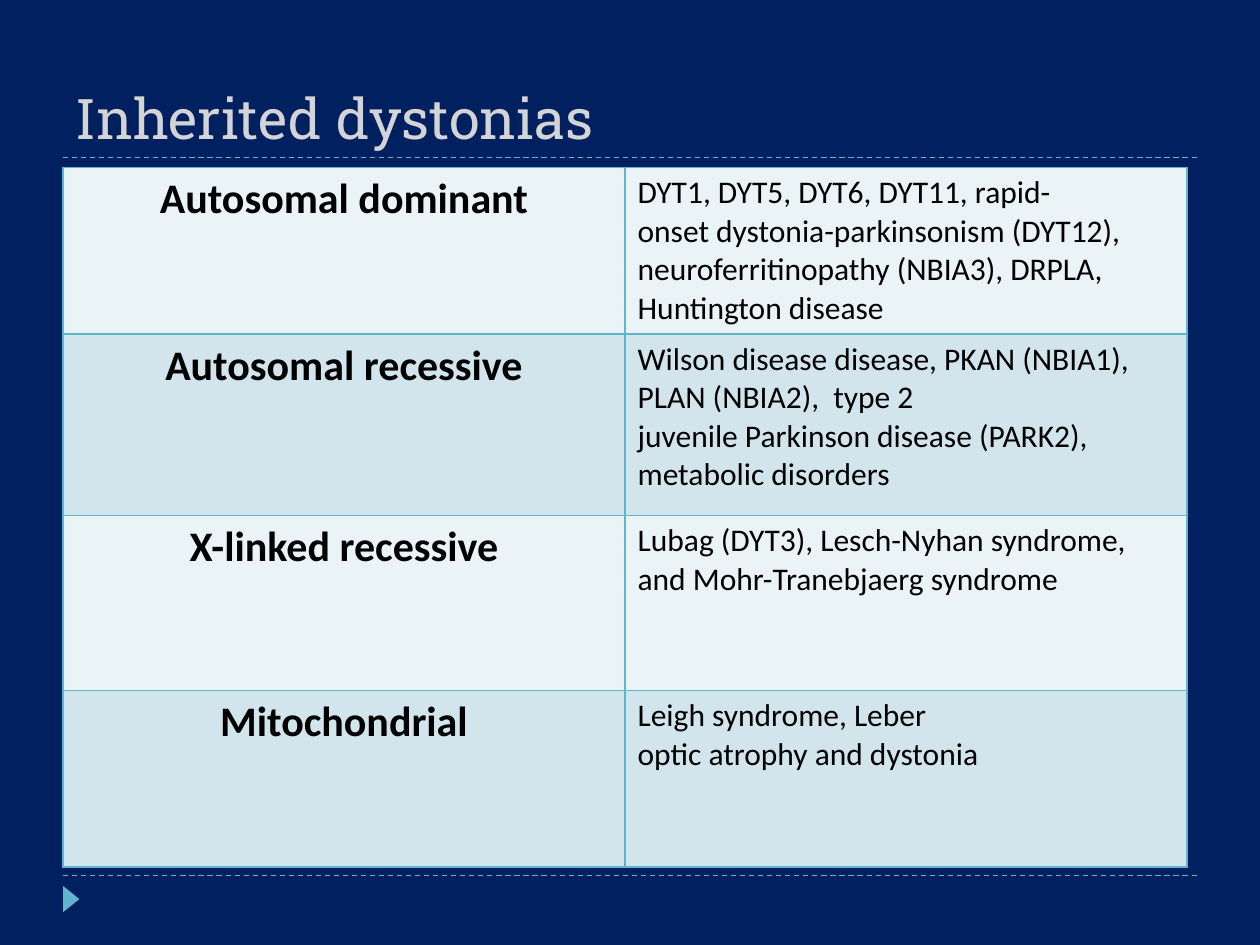
import pptx
import pptx.dml.color
import pptx.enum.dml
import pptx.enum.shapes
import pptx.enum.text
import pptx.oxml
import pptx.oxml.ns
import pptx.util
from lxml import etree

Cm = pptx.util.Cm
Pt = pptx.util.Pt
Align = pptx.enum.text.PP_ALIGN
Anchor = pptx.enum.text.MSO_ANCHOR

COLOURS = {
    "background": "002060",
    "accent": "60B5CC",
    "title": "D4D4D6",
    "text": "000000",
    "light row": "EAF3F6",
    "dark row": "D2E5EC",
}

# Row height in cm, inheritance type, paragraphs of examples
ROWS = [
    (3.35, "Autosomal dominant", [
        "DYT1, DYT5, DYT6, DYT11, rapid-",
        "onset dystonia-parkinsonism (DYT12), neuroferritinopathy (NBIA3), "
        "DRPLA, Huntington disease"]),
    (3.66, "Autosomal recessive", [
        "Wilson disease disease, PKAN (NBIA1), PLAN (NBIA2),  type 2",
        "juvenile Parkinson disease (PARK2), metabolic disorders"]),
    (3.53, "X-linked recessive", [
        "Lubag (DYT3), Lesch-Nyhan syndrome, and Mohr-Tranebjaerg syndrome"]),
    (3.56, "Mitochondrial", [
        "Leigh syndrome, Leber",
        "optic atrophy and dystonia"]),
]


def colour(name):
    return pptx.dml.color.RGBColor.from_string(COLOURS[name])


def write(frame, paragraphs, size=18, font="Calibri", ink="text", bold=False,
          align=Align.LEFT, anchor=Anchor.TOP):
    frame.word_wrap = True
    frame.vertical_anchor = anchor
    for index, text in enumerate(paragraphs):
        para = frame.paragraphs[0] if index == 0 else frame.add_paragraph()
        para.alignment = align
        span = para.add_run()
        span.text = text
        span.font.size = Pt(size)
        span.font.name = font
        span.font.bold = bold
        span.font.color.rgb = colour(ink)


def add_rule(page, left, top, width):
    rule = page.shapes.add_connector(
        pptx.enum.shapes.MSO_CONNECTOR.STRAIGHT,
        Cm(left), Cm(top), Cm(left + width), Cm(top))
    rule.line.color.rgb = colour("accent")
    rule.line.width = Pt(0.75)
    rule.line.dash_style = pptx.enum.dml.MSO_LINE.DASH
    etree.SubElement(rule._element.spPr, pptx.oxml.ns.qn("a:effectLst"))


def add_header(page, left, top, width, height):
    box = page.shapes.add_textbox(Cm(left), Cm(top), Cm(width), Cm(height))
    write(box.text_frame, ["Inherited dystonias"], size=32,
          font="Roboto Slab", ink="title", anchor=Anchor.BOTTOM)
    add_rule(page, left, top + height, width)


def add_footer(page, left, top, width):
    add_rule(page, left, top, width)
    marker = page.shapes.add_shape(
        pptx.enum.shapes.MSO_SHAPE.ISOSCELES_TRIANGLE,
        Cm(left - 0.1), Cm(top + 0.31), Cm(0.53), Cm(0.33))
    marker.rotation = 90
    marker.shadow.inherit = False
    marker.fill.solid()
    marker.fill.fore_color.rgb = colour("accent")
    marker.line.fill.background()


def style_cell(cell, fill):
    # Borders come before the fill in the cell properties
    properties = cell._tc.get_or_add_tcPr()
    for side in ("lnL", "lnR", "lnT", "lnB"):
        properties.append(pptx.oxml.parse_xml(
            f'<a:{side} {pptx.oxml.ns.nsdecls("a")} w="{Pt(1)}"><a:solidFill>'
            f'<a:srgbClr val="{COLOURS["accent"]}"/></a:solidFill></a:{side}>'))
    cell.fill.solid()
    cell.fill.fore_color.rgb = colour(fill)


def add_inheritance_table(page, left, top, width):
    height = sum(row[0] for row in ROWS)
    table = page.shapes.add_table(
        len(ROWS), 2, Cm(left), Cm(top), Cm(width), Cm(height)).table
    table.first_row = False
    table.horz_banding = False
    for column in table.columns:
        column.width = Cm(width / 2)
    for index, (row_height, kind, examples) in enumerate(ROWS):
        table.rows[index].height = Cm(row_height)
        fill = "dark row" if index % 2 else "light row"
        kind_cell, example_cell = table.rows[index].cells
        for cell in (kind_cell, example_cell):
            style_cell(cell, fill)
        write(kind_cell.text_frame, [kind], size=24, bold=True,
              align=Align.CENTER)
        write(example_cell.text_frame, examples)


def main():
    deck = pptx.Presentation()
    deck.slide_width = Cm(25.4)
    deck.slide_height = Cm(19.05)
    page = deck.slides.add_slide(deck.slide_layouts[6])
    page.background.fill.solid()
    page.background.fill.fore_color.rgb = colour("background")

    margin = 1.27
    content_width = 25.4 - 2 * margin
    add_footer(page, margin, 17.65, content_width)
    add_header(page, margin, 0.43, content_width, 2.74)
    add_inheritance_table(page, margin, 3.38, 22.66)
    deck.save("out.pptx")


if __name__ == "__main__":
    main()
